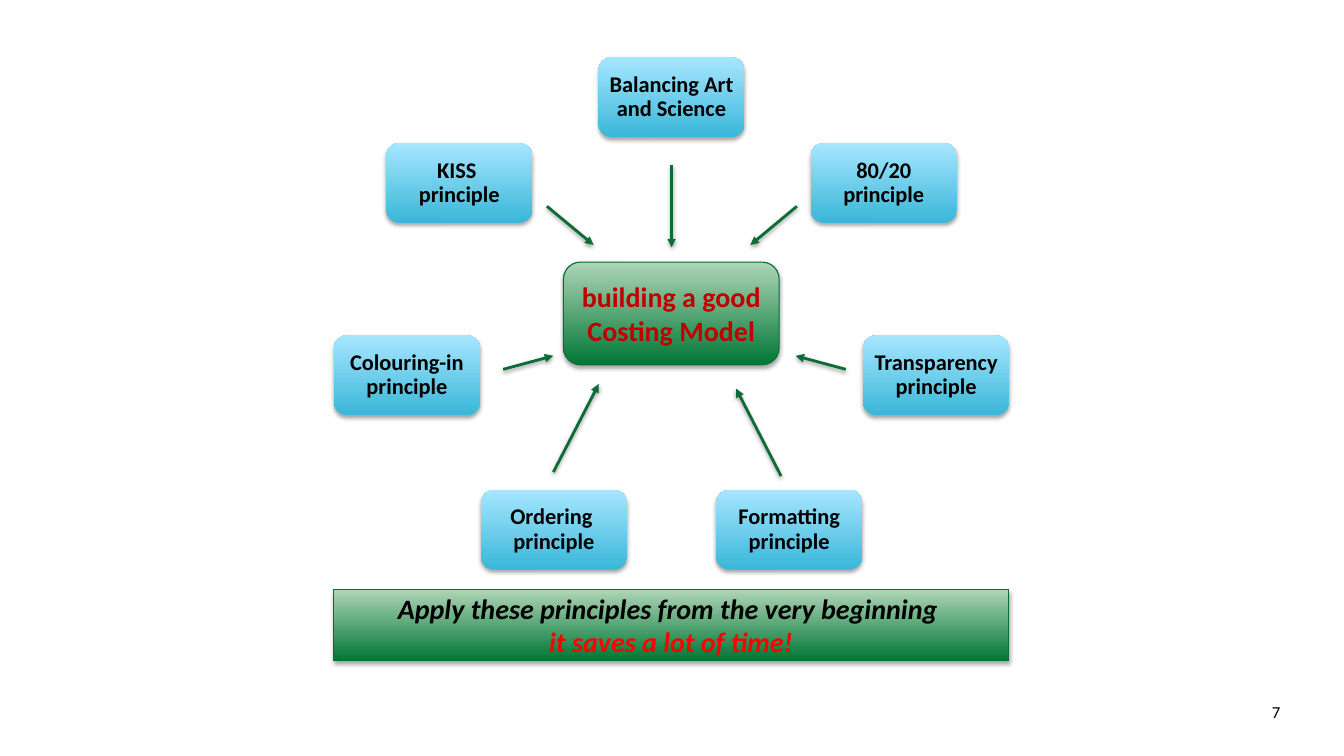
"""Build the slide on the principles behind a good costing model."""
from lxml import etree
from pptx import Presentation
from pptx.dml.color import RGBColor
from pptx.enum.shapes import MSO_CONNECTOR, MSO_SHAPE
from pptx.enum.text import MSO_ANCHOR, PP_ALIGN
from pptx.oxml.ns import qn
from pptx.util import Pt

ROUNDED, RECTANGLE = MSO_SHAPE.ROUNDED_RECTANGLE, MSO_SHAPE.RECTANGLE
STRAIGHT = MSO_CONNECTOR.STRAIGHT
MIDDLE, TOP = MSO_ANCHOR.MIDDLE, MSO_ANCHOR.TOP
CENTER, RIGHT = PP_ALIGN.CENTER, PP_ALIGN.RIGHT

GREEN, BLUE = ("007735", "AFD5B7"), ("39B7D8", "A7E6FF")
BORDER, ARROW = "086C35", "0B6C36"
BLACK, DARK_RED, RED = "000000", "C00000", "FF0000"

AXIS = 479.7
CARD_WIDTH, CARD_HEIGHT = 104.4, 57
HUB = (402.5, 187.2, 154.1, 73.4)
BANNER = (238.5, 421.2, 481.7, 50.4)
PAGE_NUMBER = (866.9, 497.5, 54.7, 28.1)

HUB_TEXT = [("building a good Costing Model", DARK_RED)]
BANNER_LINES = [("Apply these principles from the very beginning ", BLACK),
                ("it saves a lot of time!", RED)]

# Each principle: lines, card offset from the axis, card top, arrow start, arrow end
PRINCIPLES = [
    (["Balancing Art and Science"], 0, 41, (0, 117.6), (0, 176.6)),
    (["KISS ", "principle"], -151.6, 102.2, (-89, 147.4), (-55.7, 175)),
    (["Ordering ", "principle"], -84, 349.9, (-84.4, 337.2), (-52, 274.3)),
    (["Formatting principle"], 84, 349.9, (78.2, 340), (46.1, 277.6)),
    (["Colouring-in principle"], -189, 239.6, (-120.3, 263.8), (-84.5, 254.2)),
    (["Transparency principle"], 189, 239.6, (124.5, 263.8), (88.6, 254.2)),
    (["80/20", "principle"], 151.6, 102.2, (89.5, 147.4), (56.3, 175)),
]


def color(value):
    return RGBColor.from_string(value)


def points(*lengths):
    return [Pt(length) for length in lengths]


def add_shadow(item, distance, opacity):
    properties = item._element.spPr
    effects = etree.SubElement(properties, qn("a:effectLst"))
    shadow = etree.SubElement(effects, qn("a:outerShdw"), blurRad=str(Pt(3.1)),
                              dist=str(Pt(distance)), dir="5400000", rotWithShape="0")
    tint = etree.SubElement(shadow, qn("a:srgbClr"), val=BLACK)
    etree.SubElement(tint, qn("a:alpha"), val=str(opacity * 1000))


def write(item, lines, size, bold=True, italic=False, align=CENTER, anchor=MIDDLE):
    frame = item.text_frame
    frame.word_wrap = True
    frame.vertical_anchor = anchor
    paragraph = frame.paragraphs[0]
    paragraph.alignment = align
    for index, (text, hue) in enumerate(lines):
        if index:
            paragraph.add_line_break()
        run = paragraph.add_run()
        run.text = text
        font = run.font
        font.name, font.size = "Calibri", Pt(size)
        font.bold, font.italic = bold, italic
        font.color.rgb = color(hue)
    return paragraph


def add_panel(slide, preset, box, gradient, border=None):
    panel = slide.shapes.add_shape(preset, *points(*box))
    panel.fill.gradient()
    panel.fill.gradient_angle = 90
    for stop, hue, position in zip(panel.fill.gradient_stops, gradient, (0, 1)):
        stop.color.rgb = color(hue)
        stop.position = position
    if border:
        panel.line.color.rgb = color(border)
        panel.line.width = Pt(0.75)
    else:
        panel.line.fill.background()
    add_shadow(panel, 1.8, 35)
    return panel


def add_card(slide, lines, offset, top):
    left = AXIS + offset - CARD_WIDTH / 2
    card = add_panel(slide, ROUNDED, (left, top, CARD_WIDTH, CARD_HEIGHT), BLUE)
    paragraph = write(card, [(line, BLACK) for line in lines], 16)
    paragraph.line_spacing = 0.9
    frame = card.text_frame
    frame.margin_left = frame.margin_right = Pt(2.3)
    frame.margin_top = frame.margin_bottom = Pt(2.3)


def add_arrow(slide, start, end):
    (start_offset, start_y), (end_offset, end_y) = start, end
    arrow = slide.shapes.add_connector(STRAIGHT, *points(
        AXIS + start_offset, start_y, AXIS + end_offset, end_y))
    arrow.line.color.rgb = color(ARROW)
    arrow.line.width = Pt(2)
    etree.SubElement(arrow.line._get_or_add_ln(), qn("a:tailEnd"), type="triangle")
    add_shadow(arrow, 1.6, 38)


def main():
    deck = Presentation()
    deck.slide_width, deck.slide_height = points(960, 540)
    slide = deck.slides.add_slide(deck.slide_layouts[6])

    page_number = slide.shapes.add_textbox(*points(*PAGE_NUMBER))
    write(page_number, [("7", BLACK)], 12, bold=False, align=RIGHT, anchor=TOP)

    hub = add_panel(slide, ROUNDED, HUB, GREEN, BORDER)
    write(hub, HUB_TEXT, 20)

    for lines, offset, top, start, end in PRINCIPLES:
        add_card(slide, lines, offset, top)
        add_arrow(slide, start, end)

    banner = add_panel(slide, RECTANGLE, BANNER, GREEN, BORDER)
    write(banner, BANNER_LINES, 20, italic=True)

    deck.save("out.pptx")


if __name__ == "__main__":
    main()
